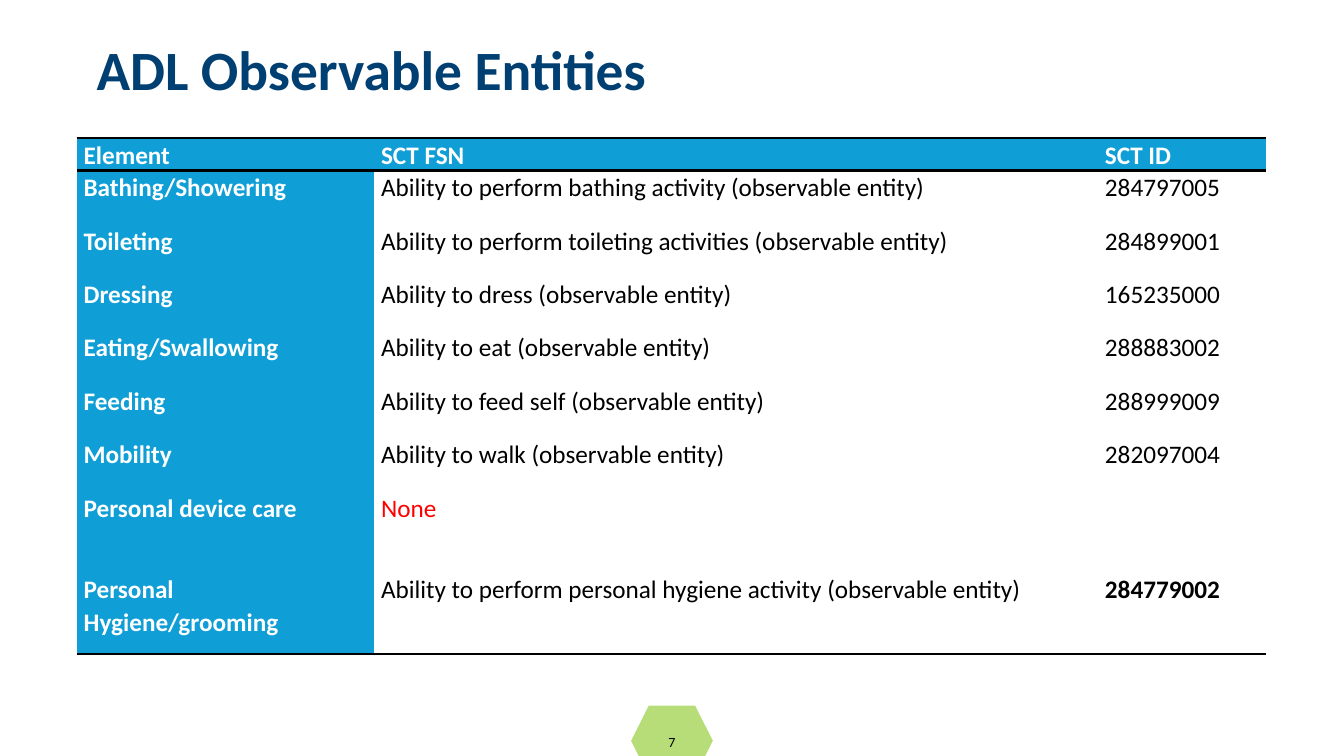
"""Build the slide listing ADL observable entities with their SCT codes."""
from pptx import Presentation
from pptx.dml.color import RGBColor
from pptx.enum.shapes import MSO_SHAPE as Shape
from pptx.enum.text import MSO_ANCHOR as Anchor, PP_ALIGN as Align
from pptx.oxml import parse_xml
from pptx.oxml.ns import nsdecls
from pptx.util import Inches, Pt

TITLE = "ADL Observable Entities"
PAGE = "7"
ROWS = [
    ("Element", "SCT FSN", "SCT ID"),
    ("Bathing/Showering", "Ability to perform bathing activity (observable entity)", "284797005"),
    ("Toileting", "Ability to perform toileting activities (observable entity)", "284899001"),
    ("Dressing", "Ability to dress (observable entity)", "165235000"),
    ("Eating/Swallowing", "Ability to eat (observable entity)", "288883002"),
    ("Feeding", "Ability to feed self (observable entity)", "288999009"),
    ("Mobility", "Ability to walk (observable entity)", "282097004"),
    ("Personal device care", "None", ""),
    ("Personal Hygiene/grooming", "Ability to perform personal hygiene activity (observable entity)", "284779002"),
]
COLS = (2.95, 7.18, 1.67)
HEADER_H, ROW_H, TALL_H, TALL_ROWS = 0.32, 0.53, 0.81, 2
WIDTH, HEIGHT = 13.33, 7.5
FONT = "Calibri"
NAVY, BLUE, GREEN = "003F72", "0F9ED5", "B7DD79"
WHITE, BLACK, RED = "FFFFFF", "000000", "FF0000"


def rgb(value):
    """Turn a hex string into a colour."""
    return RGBColor.from_string(value)


def write(p, text, size, color, bold=False):
    """Add one formatted run to a paragraph."""
    r = p.add_run()
    r.text = text
    r.font.name, r.font.size, r.font.bold = FONT, Pt(size), bold
    r.font.color.rgb = rgb(color)


def add_text(s, box, text, size, color, bold=False):
    """Add a one-line text box and return its frame."""
    tf = s.shapes.add_textbox(*map(Inches, box)).text_frame
    tf.word_wrap = True
    write(tf.paragraphs[0], text, size, color, bold)
    return tf


def set_borders(cell, ruled):
    """Rule the named sides of a cell in black and clear the others."""
    props = cell._tc.get_or_add_tcPr()
    for i, side in enumerate("LRTB"):
        paint = f'<a:solidFill><a:srgbClr val="{BLACK}"/></a:solidFill>' if side in ruled else "<a:noFill/>"
        props.insert(i, parse_xml(f'<a:ln{side} {nsdecls("a")} w="{Pt(2)}">{paint}</a:ln{side}>'))


def fill_cell(cell, text, row, col):
    """Style one cell by its place in the table."""
    last = len(ROWS) - 1
    heading = row == 0 or col == 0
    cell.fill.solid()
    cell.fill.fore_color.rgb = rgb(BLUE if heading else WHITE)
    cell.margin_left = cell.margin_right = Inches(0.07)
    cell.margin_top = cell.margin_bottom = 0
    set_borders(cell, {0: "TB", 1: "T", last: "B"}.get(row, ""))
    p = cell.text_frame.paragraphs[0]
    p.line_spacing = 1.07
    if text:
        color = WHITE if heading else RED if text == "None" else BLACK
        write(p, text, 18, color, heading or (row, col) == (last, 2))
    else:
        p.font.size = Pt(18)


def add_entities(s):
    """Add the table of entities."""
    body = len(ROWS) - 1 - TALL_ROWS
    heights = [HEADER_H] + [ROW_H] * body + [TALL_H] * TALL_ROWS
    box = (0.76, 1.37, sum(COLS), sum(heights))
    table = s.shapes.add_table(len(ROWS), len(COLS), *map(Inches, box)).table
    table.first_row = table.horz_banding = False
    for column, width in zip(table.columns, COLS):
        column.width = Inches(width)
    for i, (row, height) in enumerate(zip(table.rows, heights)):
        row.height = Inches(height)
        for j, cell in enumerate(row.cells):
            fill_cell(cell, ROWS[i][j], i, j)


def main():
    """Compose and save the slide."""
    prs = Presentation()
    prs.slide_width, prs.slide_height = Inches(WIDTH), Inches(HEIGHT)
    s = prs.slides.add_slide(prs.slide_layouts[6])
    sp = s.shapes.add_shape(Shape.HEXAGON, *map(Inches, ((WIDTH - 0.81) / 2, 7, 0.81, 0.7)))
    sp.shadow.inherit = False
    sp.fill.solid()
    sp.fill.fore_color.rgb = rgb(GREEN)
    sp.line.fill.background()
    tf = add_text(s, (0.86, 0.27, 8.37, 0.71), TITLE, 39.6, NAVY, True)
    tf.margin_top = Inches(0.08)
    add_entities(s)
    tf = add_text(s, ((WIDTH - 3) / 2, 7.23, 3, 0.27), PAGE, 10, BLACK)
    tf.vertical_anchor = Anchor.MIDDLE
    tf.paragraphs[0].alignment = Align.CENTER
    prs.save("out.pptx")


if __name__ == "__main__":
    main()
